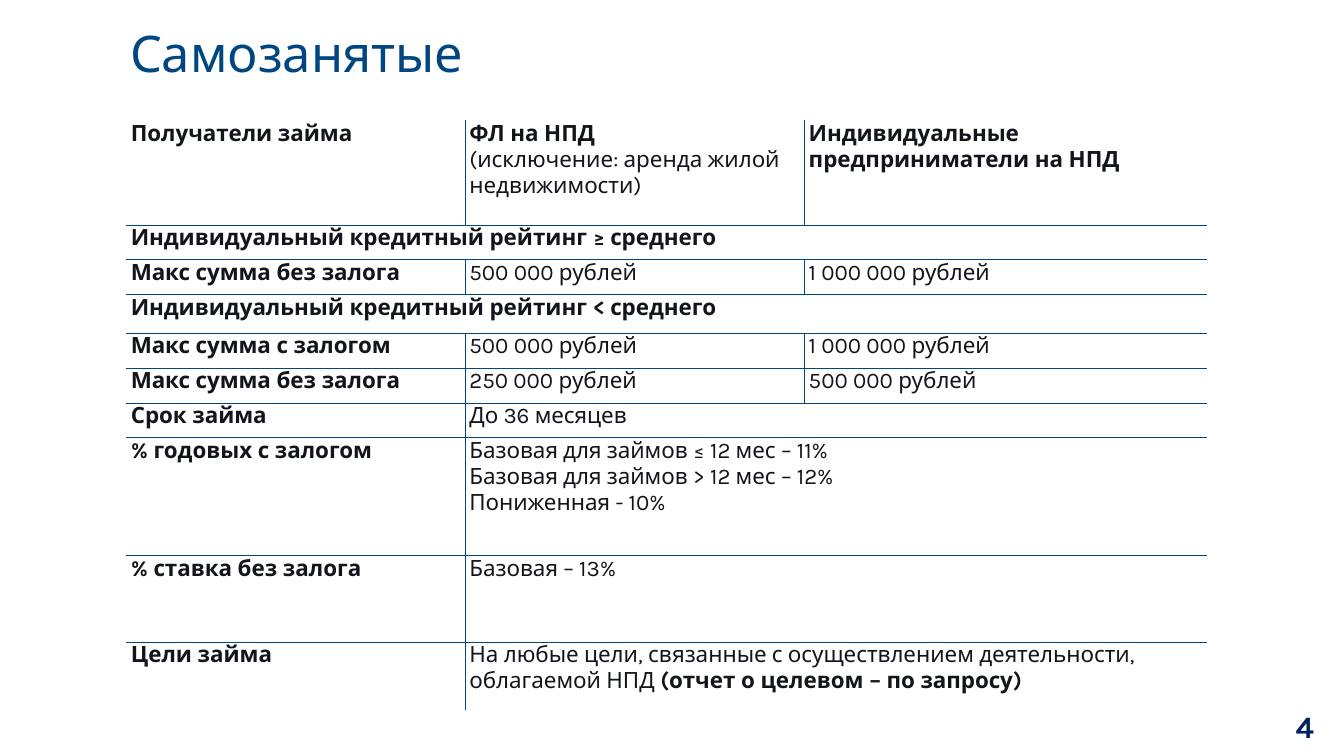
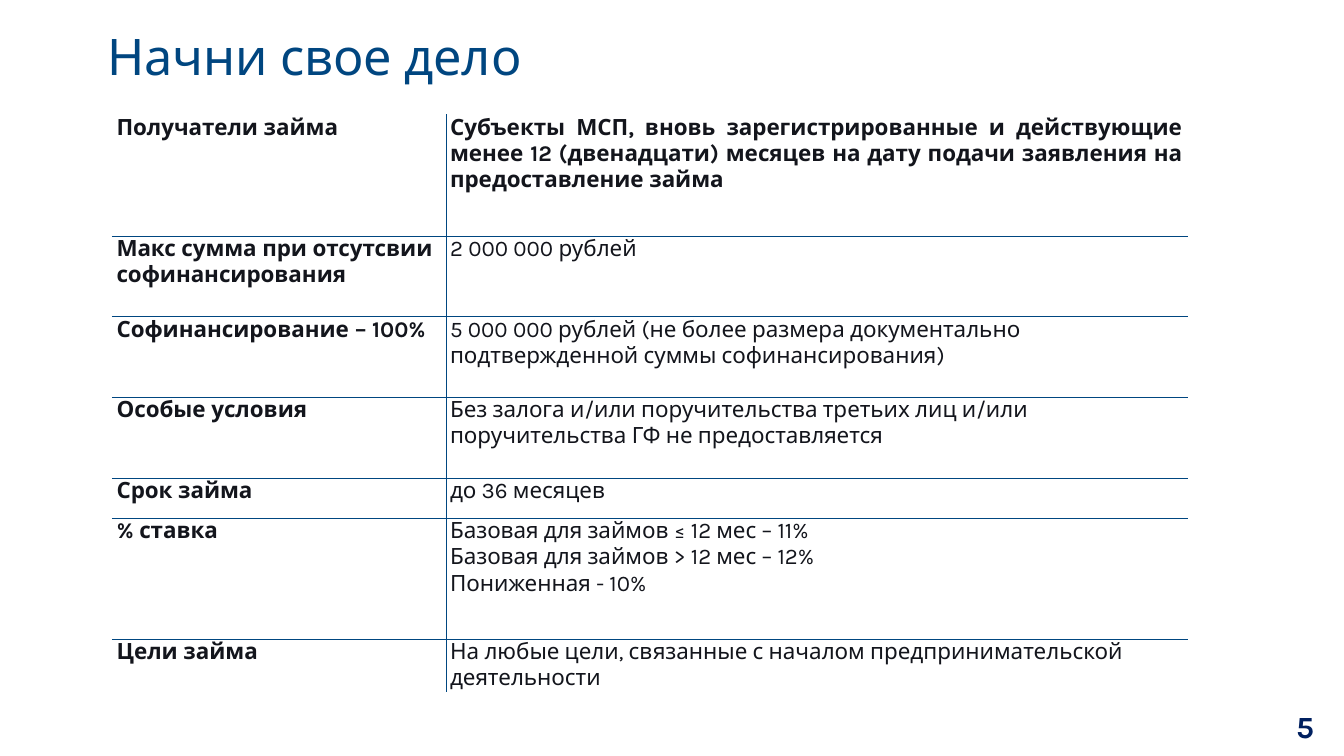
from dataclasses import dataclass

from lxml import etree
from pptx import Presentation
from pptx import util as u
from pptx.dml.color import RGBColor
from pptx.enum import text
from pptx.oxml import ns


@dataclass(frozen=True)
class Theme:
    font: str = "Karla"
    paper: str = "FFFFFF"
    rule: str = "004680"
    title: str = "004680"
    body: str = "13151C"
    number: str = "002060"
    title_size: float = 36
    body_size: float = 16
    number_size: float = 22
    rule_width: float = 0.75
    edge_width: float = 1


COLUMNS, ROWS = 160, 90
FIRST_NUMBER = 4
RATES = ["Базовая для займов ≤ 12 мес – 11%",
         "Базовая для займов > 12 мес – 12%",
         "Пониженная - 10%"]

# Asterisks enclose bold text; the last cell of a short row spans the rest.
SLIDES = [
    {
        "title": "Самозанятые",
        "title_at": (14.3, 1.3),
        "table_at": (15.1, 14.4),
        "widths": [40.3, 40.4, 47.8],
        "rows": [
            (12.4, ["*Получатели займа*"],
             ["*ФЛ на НПД*", "(исключение: аренда жилой недвижимости)"],
             ["*Индивидуальные предприниматели на НПД*"]),
            (4.15, ["*Индивидуальный кредитный рейтинг ≥ среднего*"]),
            (4.15, ["*Макс сумма без залога*"], ["500 000 рублей"], ["1 000 000 рублей"]),
            (4.6, ["*Индивидуальный кредитный рейтинг < среднего*"]),
            (4.15, ["*Макс сумма с залогом*"], ["500 000 рублей"], ["1 000 000 рублей"]),
            (4.15, ["*Макс сумма без залога*"], ["250 000 рублей"], ["500 000 рублей"]),
            (4.15, ["*Срок займа*"], ["До 36 месяцев"]),
            (14.05, ["*% годовых с залогом*"], RATES),
            (10.25, ["*% ставка без залога*"], ["Базовая – 13%"]),
            (8.2, ["*Цели займа*"],
             ["На любые цели, связанные с осуществлением деятельности, "
              "облагаемой НПД *(отчет о целевом – по запросу)*"]),
        ],
    },
    {
        "title": "Начни свое дело",
        "title_at": (11.6, 1.6),
        "table_at": (13.4, 13.7),
        "widths": [39.7, 88.2],
        "justified": (0, 1),
        "rows": [
            (14.4, ["*Получатели займа*"],
             ["*Субъекты МСП, вновь зарегистрированные и действующие менее 12 (двенадцати) "
              "месяцев на дату подачи заявления на предоставление займа*"]),
            (9.6, ["*Макс сумма при отсутсвии софинансирования*"], ["2 000 000 рублей"]),
            (9.6, ["*Софинансирование – 100%*"],
             ["5 000 000 рублей (не более размера документально подтвержденной "
              "суммы софинансирования)"]),
            (9.6, ["*Особые условия*"],
             ["Без залога и/или поручительства третьих лиц и/или поручительства ГФ "
              "не предоставляется"]),
            (4.8, ["*Срок займа*"], ["до 36 месяцев"]),
            (14.4, ["*% ставка*"], RATES),
            (6.3, ["*Цели займа*"],
             ["На любые цели, связанные с началом предпринимательской деятельности"]),
        ],
    },
]


class Deck:
    def __init__(self, theme):
        self.theme = theme
        self.presentation = Presentation()
        self.presentation.slide_width = u.Inches(13.33)
        self.presentation.slide_height = u.Inches(7.5)
        self.slide = None

    def x(self, columns):
        return round(self.presentation.slide_width * columns / COLUMNS)

    def y(self, rows):
        return round(self.presentation.slide_height * rows / ROWS)

    def new_slide(self):
        self.slide = self.presentation.slides.add_slide(self.presentation.slide_layouts[6])
        background = self.slide.background.fill
        background.solid()
        background.fore_color.rgb = RGBColor.from_string(self.theme.paper)

    def add_words(self, paragraph, words, size, color, bold=False):
        run = paragraph.add_run()
        run.text = words
        style = {"name": self.theme.font, "size": u.Pt(size), "bold": bold}
        for attribute, value in style.items():
            setattr(run.font, attribute, value)
        run.font.color.rgb = RGBColor.from_string(color)

    def label(self, words, left, top, width, height, size, color, bold=False, **layout):
        """Add one vertically centred line of text."""
        frame = self.slide.shapes.add_textbox(
            self.x(left), self.y(top), self.x(width), self.y(height)).text_frame
        frame.word_wrap = True
        frame.vertical_anchor = text.MSO_ANCHOR.MIDDLE
        line = frame.paragraphs[0]
        for attribute, value in layout.items():
            setattr(line, attribute, value)
        self.add_words(line, words, size, color, bold)

    def title(self, words, at):
        self.label(words, *at, 143.3, 10.8, self.theme.title_size, self.theme.title,
                   line_spacing=0.9)

    def number(self, value):
        self.label(str(value), 120.9, 84.6, 36.7, 3.7, self.theme.number_size,
                   self.theme.number, bold=True, alignment=text.PP_ALIGN.RIGHT)

    def borders(self, cell, **ruled):
        """Draw a rule on each side that is true and a paper-coloured edge elsewhere."""
        properties = cell._tc.get_or_add_tcPr()
        for side in "LRTB":
            color, width = ((self.theme.rule, self.theme.rule_width) if ruled[side]
                            else (self.theme.paper, self.theme.edge_width))
            line = etree.SubElement(properties, ns.qn(f"a:ln{side}"), w=str(u.Pt(width)))
            fill = etree.SubElement(line, ns.qn("a:solidFill"))
            etree.SubElement(fill, ns.qn("a:srgbClr"), val=color)

    def fill_cell(self, cell, paragraphs, alignment):
        frame = cell.text_frame
        for index, marked in enumerate(paragraphs):
            paragraph = frame.add_paragraph() if index else frame.paragraphs[0]
            paragraph.alignment = alignment
            for part, words in enumerate(marked.split("*")):
                if words:
                    self.add_words(paragraph, words, self.theme.body_size, self.theme.body,
                                   bold=part % 2 == 1)

    def table(self, rows, widths, at, justified=None):
        last_row, last_column = len(rows) - 1, len(widths) - 1
        table = self.slide.shapes.add_table(
            len(rows), len(widths), self.x(at[0]), self.y(at[1]),
            self.x(sum(widths)), self.y(sum(row[0] for row in rows))).table
        table.first_row = table.horz_banding = False
        for column, width in zip(table.columns, widths):
            column.width = self.x(width)

        margins = {"margin_left": u.Inches(0.04), "margin_right": u.Inches(0.04),
                   "margin_top": 0, "margin_bottom": 0}
        for r, (height, *contents) in enumerate(rows):
            table.rows[r].height = self.y(height)
            span_start = len(contents) - 1
            for c in range(len(widths)):
                cell = table.cell(r, c)
                for attribute, value in margins.items():
                    setattr(cell, attribute, value)
                self.borders(cell, L=0 < c <= span_start, R=c < span_start,
                             T=r > 0, B=r < last_row)
                cell.fill.solid()
                cell.fill.fore_color.rgb = RGBColor.from_string(self.theme.paper)
            if span_start < last_column:
                table.cell(r, span_start).merge(table.cell(r, last_column))
            for c, paragraphs in enumerate(contents):
                alignment = (text.PP_ALIGN.JUSTIFY if (r, c) == justified
                             else text.PP_ALIGN.LEFT)
                self.fill_cell(table.cell(r, c), paragraphs, alignment)


def main():
    deck = Deck(Theme())
    for number, content in enumerate(SLIDES, FIRST_NUMBER):
        deck.new_slide()
        deck.number(number)
        deck.title(content["title"], content["title_at"])
        deck.table(content["rows"], content["widths"], content["table_at"],
                   content.get("justified"))
    deck.presentation.save("out.pptx")


if __name__ == "__main__":
    main()
